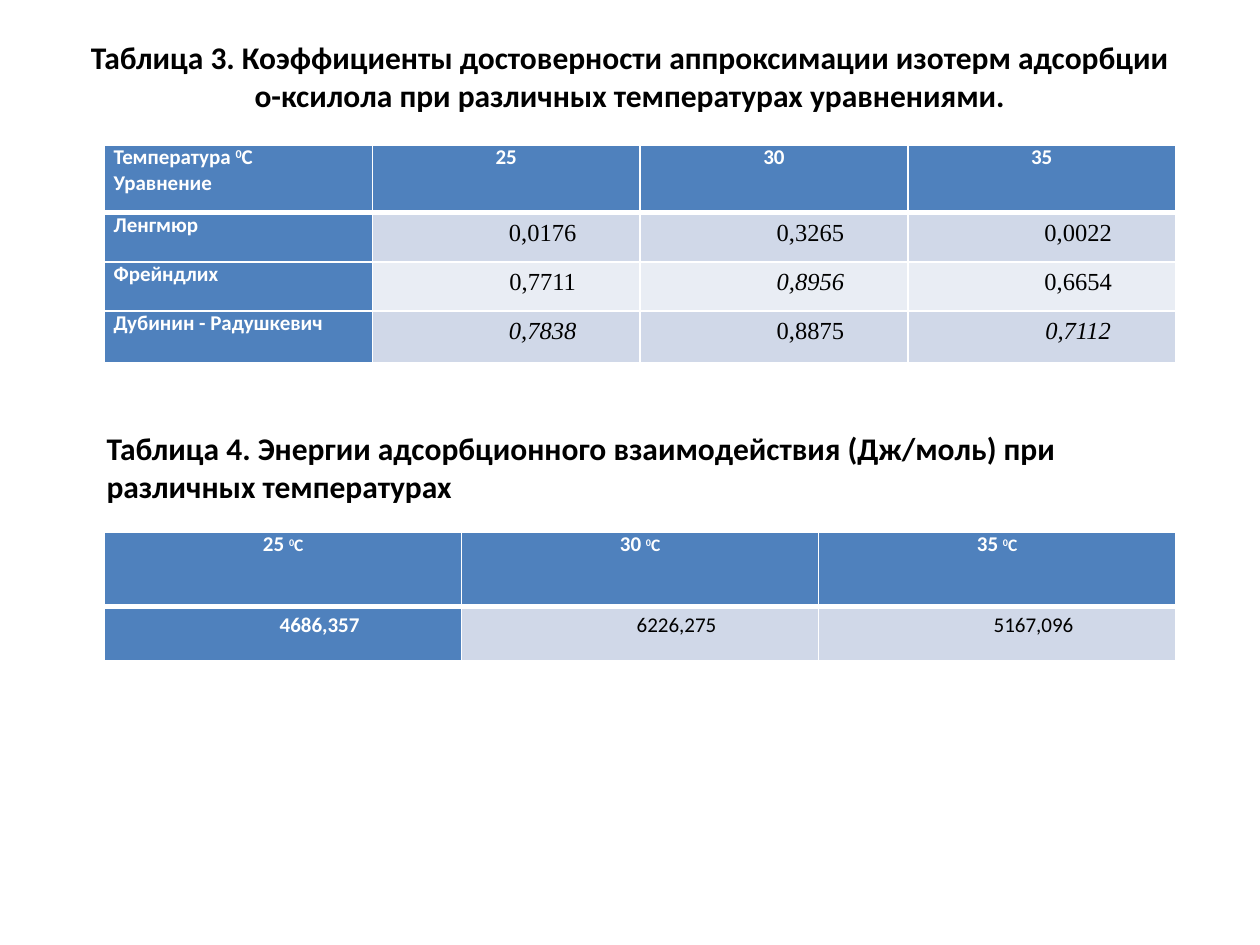
from dataclasses import dataclass

from lxml.etree import SubElement
from pptx import Presentation
from pptx.dml.color import RGBColor as Rgb
from pptx.enum.text import MSO_ANCHOR as Anchor, MSO_AUTO_SIZE as AutoSize, PP_ALIGN as Align
from pptx.oxml.ns import qn
from pptx.util import Cm, Pt


@dataclass(frozen=True)
class Theme:
    font: str = "Calibri"
    serif: str = "Times New Roman"
    ink: str = "000000"
    paper: str = "FFFFFF"
    header: str = "4F81BD"
    bands: tuple = ("D0D8E8", "E9EDF4")
    heading: int = 18
    label: int = 12
    unit: int = 10
    value: int = 14
    thin: int = 1
    thick: int = 3


class SlideBuilder:
    """Hold the theme and the current slide, and add styled elements to it."""

    def __init__(self, slide, theme):
        self.slide = slide
        self.theme = theme

    def run(self, paragraph, text, size, color, bold=False, italic=False, font=None, raised=False):
        piece = paragraph.add_run()
        piece.text = text
        piece.font.name = font or self.theme.font
        piece.font.size = Pt(size)
        piece.font.bold = bold
        piece.font.italic = italic
        piece.font.color.rgb = Rgb.from_string(color)
        if raised:
            piece.font._element.set("baseline", "30000")

    def heading(self, holder, text, align):
        frame = holder.text_frame
        frame.word_wrap = True
        paragraph = frame.paragraphs[0]
        paragraph.alignment = align
        self.run(paragraph, text, self.theme.heading, self.theme.ink, bold=True)
        return frame

    def title(self, text, left, top, width, height):
        holder = self.slide.shapes.title
        holder.left, holder.top, holder.width, holder.height = left, top, width, height
        frame = self.heading(holder, text, Align.CENTER)
        frame.auto_size = AutoSize.NONE
        frame.vertical_anchor = Anchor.MIDDLE

    def caption(self, text, left, top, width, height):
        holder = self.slide.shapes.add_textbox(left, top, width, height)
        self.heading(holder, text, Align.LEFT).auto_size = AutoSize.SHAPE_TO_FIT_TEXT

    def table(self, left, top, width, row_heights, columns):
        grid = self.slide.shapes.add_table(
            len(row_heights), columns, left, top, width, sum(row_heights)).table
        grid.first_col = True
        for row, height in zip(grid.rows, row_heights):
            row.height = height
        for r in range(len(row_heights)):
            for c in range(columns):
                self.cell(grid.cell(r, c), r, c)
        return grid

    def cell(self, cell, row, column):
        theme = self.theme
        weights = {"lnL": theme.thin, "lnR": theme.thin,
                   "lnT": theme.thick if row == 1 else theme.thin,
                   "lnB": theme.thick if row == 0 else theme.thin}
        properties = cell._tc.get_or_add_tcPr()
        for side, weight in weights.items():
            line = SubElement(properties, qn(f"a:{side}"), w=str(Pt(weight)))
            SubElement(SubElement(line, qn("a:solidFill")), qn("a:srgbClr"), val=theme.paper)
        is_header = row == 0 or column == 0
        cell.fill.solid()
        cell.fill.fore_color.rgb = Rgb.from_string(
            theme.header if is_header else theme.bands[(row - 1) % 2])
        cell.margin_left = cell.margin_right = Cm(0.18)
        cell.margin_top = cell.margin_bottom = 0

    def label(self, cell, lines, align, unit_size=None):
        frame = cell.text_frame
        for index, (text, degrees) in enumerate(lines):
            paragraph = frame.add_paragraph() if index else frame.paragraphs[0]
            paragraph.alignment = align
            size, color = self.theme.label, self.theme.paper
            self.run(paragraph, text, size, color, bold=True)
            if degrees:
                self.run(paragraph, "0", unit_size or size, color, bold=True, raised=True)
                self.run(paragraph, "С", unit_size or size, color, bold=True)

    def value(self, cell, text, **style):
        cell.margin_left = cell.margin_right = 0
        paragraph = cell.text_frame.paragraphs[0]
        paragraph.alignment = Align.CENTER
        paragraph.line_spacing = 1.25
        properties = paragraph._p.get_or_add_pPr()
        properties.set("marL", "0")
        properties.set("indent", str(Cm(1.47)))
        self.run(paragraph, text, **style)


TEMPERATURES = ("25", "30", "35")
COEFFICIENTS = {
    "Ленгмюр": ("0,0176", "0,3265", "0,0022"),
    "Фрейндлих": ("0,7711", "0,8956", "0,6654"),
    "Дубинин - Радушкевич": ("0,7838", "0,8875", "0,7112"),
}
ENERGIES = ("4686,357", "6226,275", "5167,096")


def add_coefficients(builder):
    theme = builder.theme
    heights = [Cm(1.37), Cm(0.99), Cm(0.99), Cm(1.04)]
    grid = builder.table(Cm(2.11), Cm(2.92), Cm(21.59), heights, 4)
    builder.label(grid.cell(0, 0), [("Температура ", True), ("Уравнение", False)], Align.JUSTIFY)
    for column, temperature in enumerate(TEMPERATURES, 1):
        builder.label(grid.cell(0, column), [(temperature, False)], Align.CENTER)
    best = [max(column) for column in zip(*COEFFICIENTS.values())]
    for row, (equation, values) in enumerate(COEFFICIENTS.items(), 1):
        builder.label(grid.cell(row, 0), [(equation, False)], Align.JUSTIFY)
        for column, coefficient in enumerate(values, 1):
            builder.value(grid.cell(row, column), coefficient, size=theme.value, color=theme.ink,
                          font=theme.serif, italic=coefficient == best[column - 1])


def add_energies(builder):
    theme = builder.theme
    grid = builder.table(Cm(2.11), Cm(10.72), Cm(21.59), [Cm(1.5), Cm(1.09)], 3)
    for column, (temperature, energy) in enumerate(zip(TEMPERATURES, ENERGIES)):
        builder.label(grid.cell(0, column), [(f"{temperature} ", True)], Align.CENTER, theme.unit)
        is_first = column == 0
        builder.value(grid.cell(1, column), energy, size=theme.label, bold=is_first,
                      color=theme.paper if is_first else theme.ink)


def main():
    deck = Presentation()
    deck.slide_width, deck.slide_height = Cm(25.4), Cm(19.05)
    builder = SlideBuilder(deck.slides.add_slide(deck.slide_layouts[5]), Theme())
    builder.title(
        "Таблица 3. Коэффициенты достоверности аппроксимации изотерм адсорбции "
        "о-ксилола при различных температурах уравнениями.",
        Cm(1.27), Cm(0.76), Cm(22.86), Cm(1.55))
    add_coefficients(builder)
    builder.caption(
        "Таблица 4. Энергии адсорбционного взаимодействия (Дж/моль) "
        "при различных температурах",
        Cm(1.9), Cm(8.53), Cm(21.79), Cm(1.8))
    add_energies(builder)
    deck.save("out.pptx")


if __name__ == "__main__":
    main()
